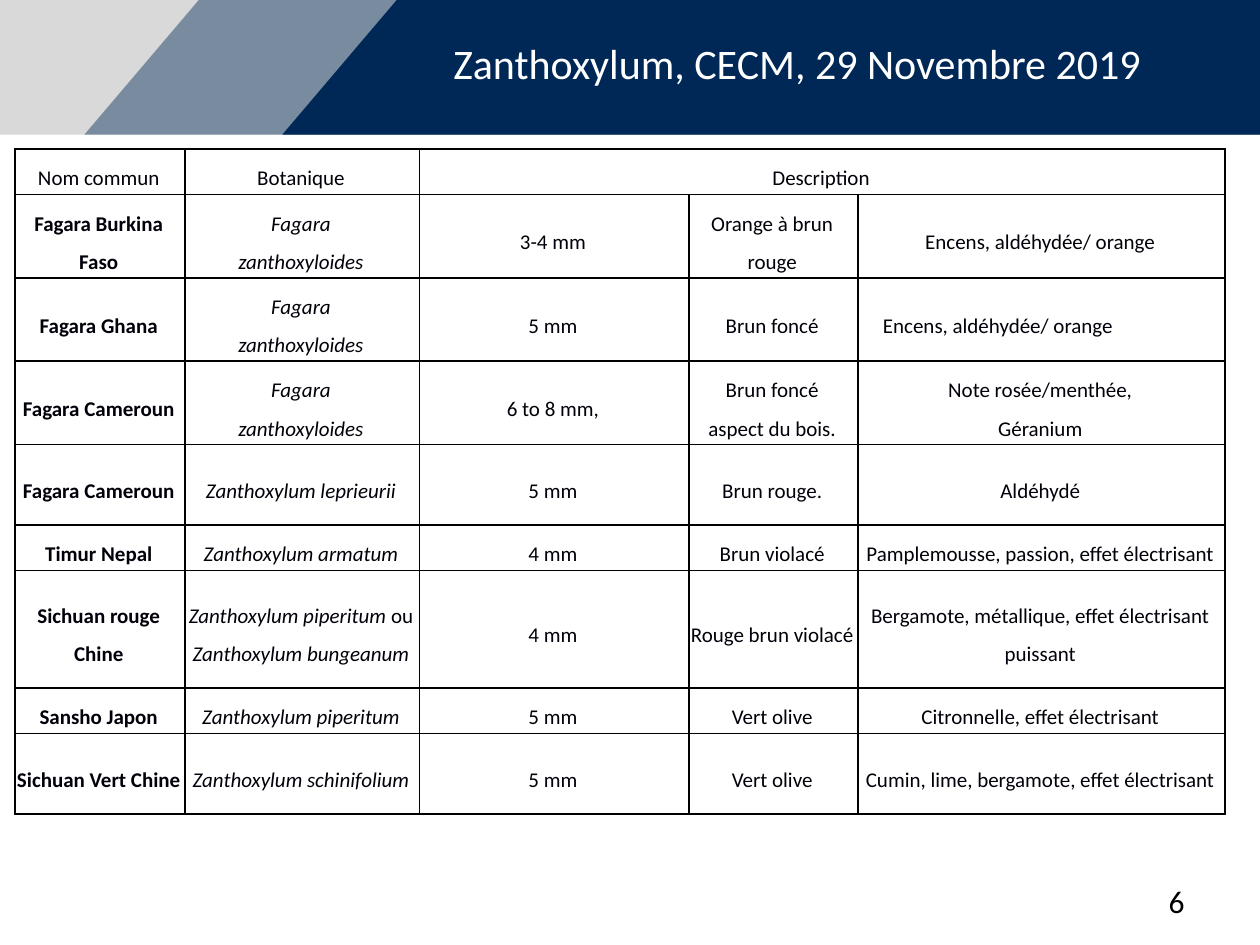
from pptx import Presentation
from pptx.dml.color import RGBColor
from pptx.enum.shapes import MSO_SHAPE as Shape
from pptx.enum.text import MSO_ANCHOR as Anchor, PP_ALIGN as Align
from pptx.oxml import parse_xml
from pptx.oxml.ns import nsdecls, qn
from pptx.util import Pt

NAVY = RGBColor(0x00, 0x28, 0x57)
GREY = RGBColor(0xD9, 0xD9, 0xD9)
WHITE = RGBColor(0xFF, 0xFF, 0xFF)
BLACK = RGBColor(0x00, 0x00, 0x00)
INK = RGBColor(0x00, 0x00, 0x0A)
BORDER = RGBColor(0x00, 0x00, 0x01)


def add_run(paragraph, text, **formats):
    run = paragraph.add_run()
    run.text = text
    run.font.name = "Calibri"
    color = formats.pop("color")
    for name, value in formats.items():
        setattr(run.font, name, value)
    run.font.color.rgb = color


def add_borders(cell):
    properties = cell._tc.get_or_add_tcPr()
    for position, side in enumerate(("lnL", "lnR", "lnT", "lnB")):
        properties.insert(position, parse_xml(
            f'<a:{side} {nsdecls("a")} w="{Pt(1)}"><a:solidFill>'
            f'<a:srgbClr val="{BORDER}"/></a:solidFill></a:{side}>'))


deck = Presentation()
deck.slide_width, deck.slide_height = Pt(720), Pt(540)
slide = deck.slides.add_slide(deck.slide_layouts[6])

# Header bands: shape, left, width, colour, opacity in percent
BAND_HEIGHT = 77
bands = [
    (Shape.RECTANGLE, 0, 720, GREY, 100),
    (Shape.PARALLELOGRAM, 48.2, 743, NAVY, 44),
    (Shape.PARALLELOGRAM, 161.3, 635, NAVY, 100),
]
for outline, left, width, color, opacity in bands:
    band = slide.shapes.add_shape(outline, Pt(left), Pt(0), Pt(width), Pt(BAND_HEIGHT))
    band.shadow.inherit = False
    band.line.fill.background()
    band.fill.solid()
    band.fill.fore_color.rgb = color
    if outline == Shape.PARALLELOGRAM:
        band.adjustments[0] = 0.85
    if opacity < 100:
        tint = band._element.spPr.find(qn("a:solidFill"))[0]
        tint.append(parse_xml(f'<a:alpha {nsdecls("a")} val="{opacity * 1000}"/>'))

# Title and page number
labels = [
    ("Zanthoxylum, CECM, 29 Novembre 2019", (252, 18, 489.6, 36), 24, WHITE, Align.LEFT),
    ("6", (516, 500.4, 168, 28.8), 18, BLACK, Align.RIGHT),
]
for text, place, size, color, align in labels:
    frame = slide.shapes.add_textbox(*map(Pt, place)).text_frame
    frame.word_wrap = True
    frame.vertical_anchor = Anchor.MIDDLE
    frame.paragraphs[0].alignment = align
    add_run(frame.paragraphs[0], text, size=Pt(size), color=color)

# Pepper table: "\n" starts a paragraph, the second column holds Latin names
HEADINGS = ["Nom commun", "Botanique", "Description", "", ""]
PEPPERS = [
    ["Fagara Burkina Faso", "Fagara\nzanthoxyloides", "3-4 mm",
     "Orange à brun rouge", "Encens, aldéhydée/ orange"],
    ["Fagara Ghana", "Fagara\nzanthoxyloides", "5 mm",
     "Brun foncé", "Encens, aldéhydée/ orange"],
    ["Fagara Cameroun", "Fagara\nzanthoxyloides", "6 to 8 mm,",
     "Brun foncé\naspect du bois.", "Note rosée/menthée,\nGéranium"],
    ["Fagara Cameroun", "Zanthoxylum leprieurii", "5 mm", "Brun rouge.", "Aldéhydé"],
    ["Timur Nepal", "Zanthoxylum armatum", "4 mm",
     "Brun violacé", "Pamplemousse, passion, effet électrisant"],
    ["Sichuan rouge\nChine", "Zanthoxylum piperitum ou Zanthoxylum bungeanum", "4 mm",
     "Rouge brun violacé", "Bergamote, métallique, effet électrisant puissant"],
    ["Sansho Japon", "Zanthoxylum piperitum", "5 mm",
     "Vert olive", "Citronnelle, effet électrisant"],
    ["Sichuan Vert Chine", "Zanthoxylum schinifolium", "5 mm",
     "Vert olive", "Cumin, lime, bergamote, effet électrisant"],
]
COLUMN_WIDTHS = [97.2, 133.9, 154.1, 96.5, 209.9]
ROW_HEIGHTS = [25.2, 46.1, 46.1, 46.1, 46.1, 25.2, 67, 25.2, 46.1]
CELL_FORMAT = {
    "margin_left": Pt(0.7), "margin_right": Pt(2.2),
    "margin_top": Pt(2.2), "margin_bottom": Pt(2.2),
    "vertical_anchor": Anchor.MIDDLE,
}
LEFT_ALIGNED = (2, 4)  # scent of Fagara Ghana

peppers = slide.shapes.add_table(
    len(ROW_HEIGHTS), len(COLUMN_WIDTHS), Pt(8.6), Pt(85.2),
    Pt(sum(COLUMN_WIDTHS)), Pt(sum(ROW_HEIGHTS))).table
peppers.first_row = peppers.horz_banding = False
for column, width in zip(peppers.columns, COLUMN_WIDTHS):
    column.width = Pt(width)
for row, height in zip(peppers.rows, ROW_HEIGHTS):
    row.height = Pt(height)
peppers.cell(0, 2).merge(peppers.cell(0, 4))

for r, entries in enumerate([HEADINGS] + PEPPERS):
    for c, entry in enumerate(entries):
        cell = peppers.cell(r, c)
        cell.fill.background()
        add_borders(cell)
        for name, value in CELL_FORMAT.items():
            setattr(cell, name, value)
        if (r, c) == LEFT_ALIGNED:
            cell.margin_left = Pt(14.3)
        if not entry:
            continue
        for i, line in enumerate(entry.split("\n")):
            frame = cell.text_frame
            paragraph = frame.add_paragraph() if i else frame.paragraphs[0]
            paragraph.alignment = Align.LEFT if (r, c) == LEFT_ALIGNED else Align.CENTER
            paragraph.line_spacing = 1.5
            # The conjunction between two Latin names stays upright
            first, conjunction, second = line.partition(" ou ")
            for text, latin in ((first, True), (conjunction, False), (second, True)):
                if text:
                    add_run(paragraph, text, size=Pt(12), color=INK,
                            bold=r > 0 and c == 0, italic=r > 0 and c == 1 and latin)

deck.save("out.pptx")
